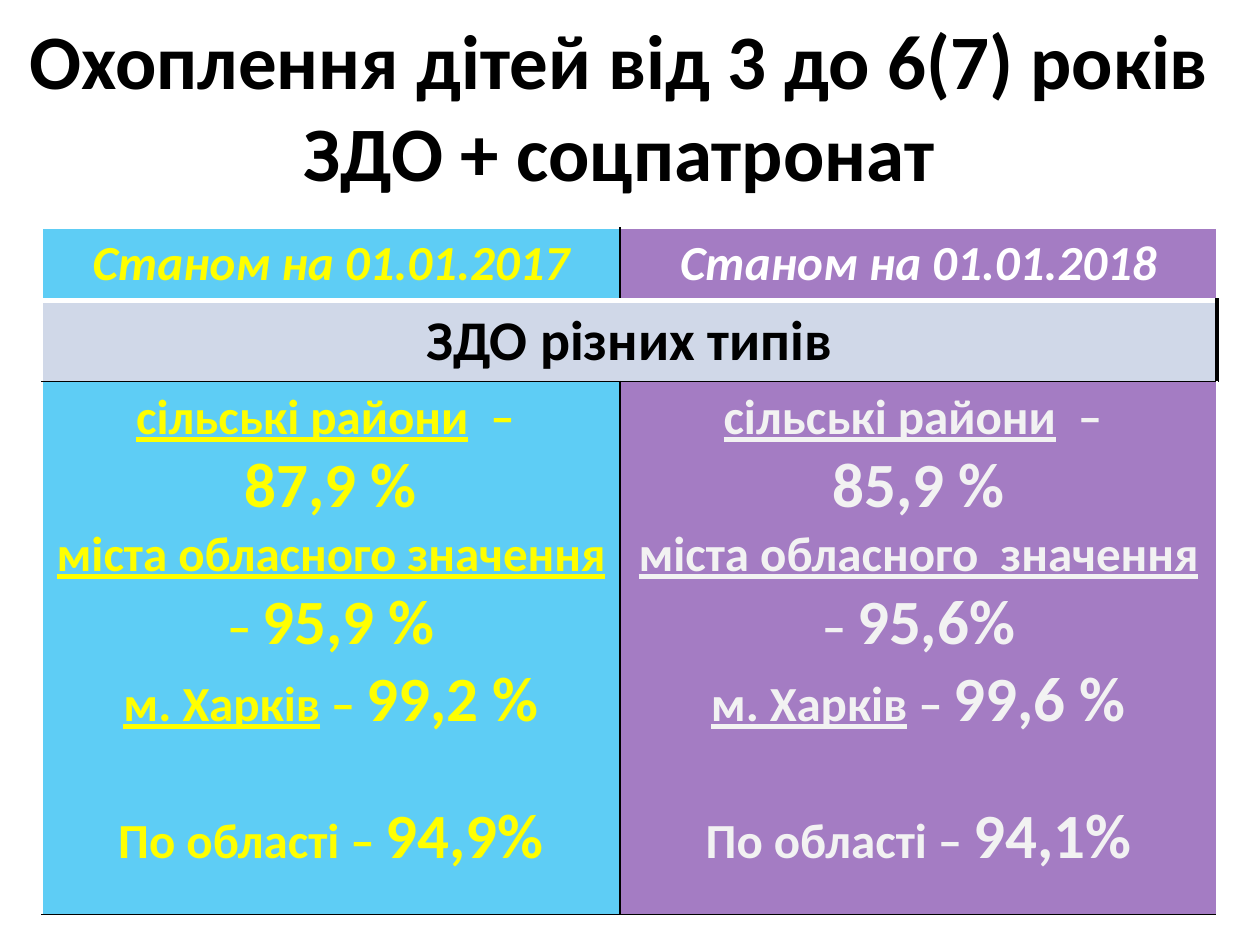
from dataclasses import dataclass

from lxml.etree import SubElement
from pptx import Presentation
from pptx.dml.color import RGBColor
from pptx.enum.text import MSO_ANCHOR as Anchor, MSO_AUTO_SIZE as Fit, PP_ALIGN as Align
from pptx.oxml import parse_xml
from pptx.oxml.ns import nsdecls, qn
from pptx.util import Pt

SCALE = 914400 / 126


@dataclass(frozen=True)
class Theme:
    """Colours and type sizes of the slide."""
    font: str = "Calibri"
    black: str = "000000"
    white: str = "FFFFFF"
    pale: str = "F2F2F2"
    yellow: str = "FFFF00"
    blue: str = "00B0F0"
    purple: str = "7030A0"
    band: str = "D0D8E8"
    alpha: int = 63
    title: int = 44
    group: int = 32
    label: int = 28
    value: int = 36


T = Theme()
THIN, THICK = (T.white, 1), (T.white, 3)
RULE, EDGE = (T.black, 1), (T.black, 2.25)

YEARS = [
    ("Станом на 01.01.2017", T.blue, T.yellow, T.yellow, "міста обласного значення",
     ("87,9 %", "95,9 %", "99,2 %", "94,9%")),
    ("Станом на 01.01.2018", T.purple, T.white, T.pale, "міста обласного  значення",
     ("85,9 %", "95,6%", "99,6 %", "94,1%")),
]


def px(n):
    """Turn pixels into EMU."""
    return round(n * SCALE)


def add_run(para, text, size, color, italic=False, under=False):
    """Add one bold run to a paragraph."""
    run = para.add_run()
    run.text = text
    font = run.font
    font.name, font.size, font.bold = T.font, Pt(size), True
    font.italic, font.underline = italic, under
    font.color.rgb = RGBColor.from_string(color)


def style_cell(cell, fill, alpha, edges):
    """Fill a cell and draw its left, right, top and bottom borders."""
    cell.fill.solid()
    cell.fill.fore_color.rgb = RGBColor.from_string(fill)
    props = cell._tc.get_or_add_tcPr()
    if alpha:
        tint = props.find(qn("a:solidFill"))[0]
        SubElement(tint, qn("a:alpha"), val=str(alpha * 1000))
    for i, (side, (color, width)) in enumerate(zip("LRTB", edges)):
        props.insert(i, parse_xml(
            f'<a:ln{side} {nsdecls("a")} w="{Pt(width)}"><a:solidFill>'
            f'<a:srgbClr val="{color}"/></a:solidFill></a:ln{side}>'))


def fill_text(cell, lines, color, italic=False):
    """Write centred lines, each a list of text, size and underline."""
    for i, line in enumerate(lines):
        para = cell.text_frame.paragraphs[0] if i == 0 else cell.text_frame.add_paragraph()
        para.alignment = Align.CENTER
        for text, size, under in line:
            add_run(para, text, size, color, italic, under)


def add_title(slide, x, y, w, h):
    """Place the slide title in its box."""
    title = slide.shapes.title
    title.left, title.top, title.width, title.height = map(px, (x, y, w, h))
    frame = title.text_frame
    frame.word_wrap, frame.auto_size = True, Fit.NONE
    frame.vertical_anchor = Anchor.MIDDLE
    para = frame.paragraphs[0]
    para.alignment = Align.CENTER
    add_run(para, "Охоплення дітей від 3 до 6(7) років ЗДО + соцпатронат", T.title, T.black)


def add_rates(slide, x, y, w, h):
    """Place the table that compares two years."""
    table = slide.shapes.add_table(3, 2, *map(px, (x, y, w, h))).table
    table.first_row = table.horz_banding = False
    left, head, band = 578, 72, 77
    for col, size in zip(table.columns, (left, w - left)):
        col.width = px(size)
    for row, size in zip(table.rows, (head, band, h - head - band)):
        row.height = px(size)

    for i, (date, fill, first, color, town, rates) in enumerate(YEARS):
        sides = (THIN, RULE) if i == 0 else (RULE, THIN)
        top, mid, body = (table.cell(r, i) for r in range(3))
        style_cell(top, fill, T.alpha, (*sides, THIN, THICK))
        style_cell(mid, T.band, None, (THIN, EDGE, THICK, RULE))
        style_cell(body, fill, T.alpha, (*sides, RULE, RULE))
        top.vertical_anchor = mid.vertical_anchor = Anchor.MIDDLE
        fill_text(top, [[(date, T.label, False)]], first, True)
        rural, urban, city, total = ((rate, T.value, False) for rate in rates)
        dash = (" – ", T.label, False)
        fill_text(body, [
            [("сільські райони", T.label, True), ("  – ", T.label, False)],
            [rural],
            [(town, T.label, True), dash, urban],
            [("м. Харків", T.label, True), dash, city],
            [("По області – ", T.label, False), total],
        ], color)
        body.text_frame.paragraphs[-1].space_before = Pt(34)

    group = table.cell(1, 0)
    group.merge(table.cell(1, 1))
    fill_text(group, [[("ЗДО різних типів", T.group, False)]], T.black)


def main():
    """Build and save the slide."""
    deck = Presentation()
    deck.slide_width, deck.slide_height = px(1260), px(945)
    slide = deck.slides.add_slide(deck.slide_layouts[5])
    add_title(slide, 0, 21, 1239, 168)
    add_rates(slide, 42, 228, 1175, 682)
    deck.save("out.pptx")


if __name__ == "__main__":
    main()
